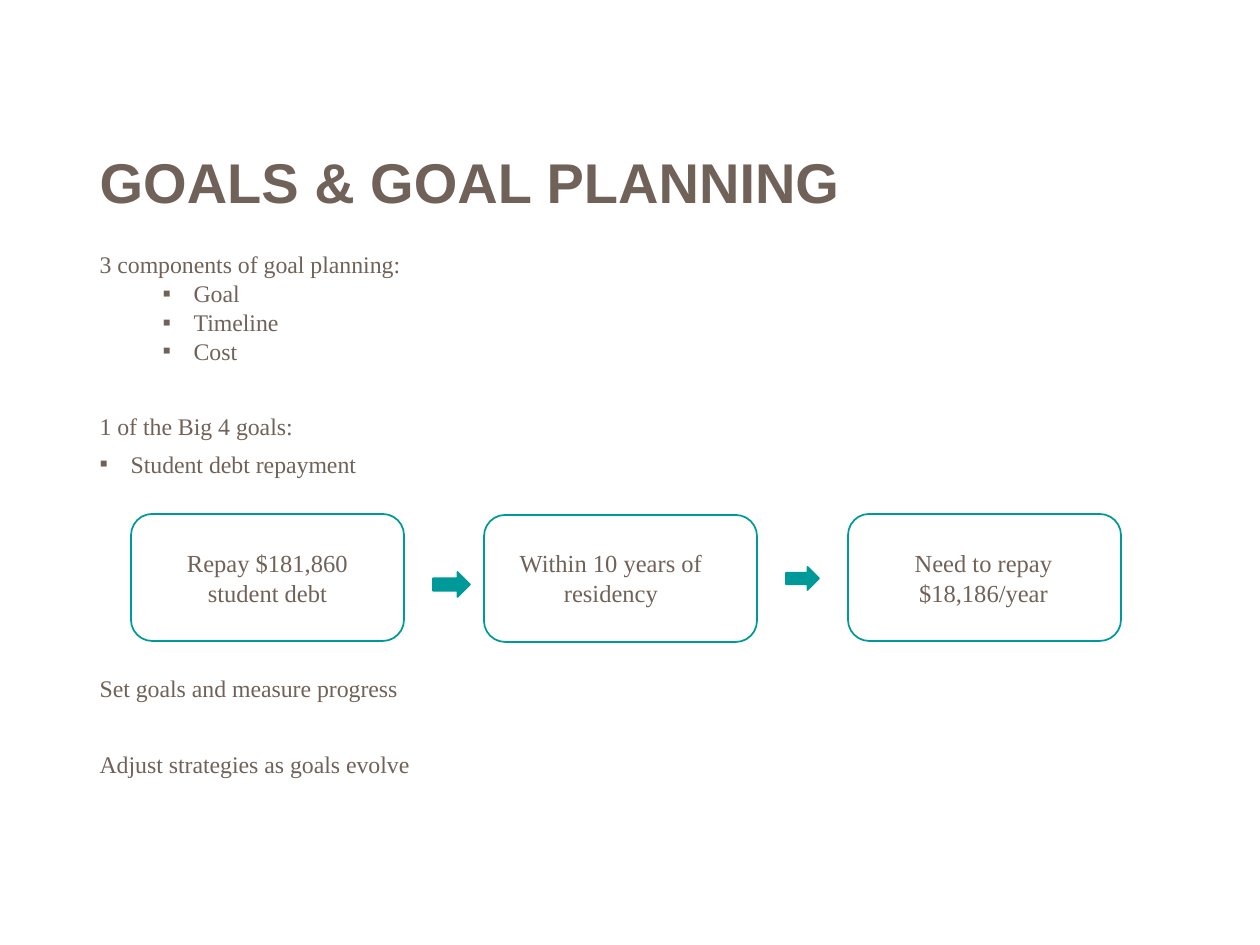
"""Build the slide on goals and goal planning."""
from lxml import etree
from pptx import Presentation
from pptx import util as u
from pptx.dml.color import RGBColor
from pptx.enum import shapes, text
from pptx.oxml import ns

SCALE = 914400 / 126
BROWN = RGBColor(0x70, 0x62, 0x58)
TEAL = RGBColor(0x00, 0x99, 0x99)


def px(*lengths):
    return [u.Emu(round(length * SCALE)) for length in lengths]


def write(para, words, size=14, font="Times New Roman", bold=False,
          align=text.PP_ALIGN.LEFT, bullet=None, margin=0, hang=0,
          before=0, spacing=None):
    props = para._p.get_or_add_pPr()
    margin_emu, hang_emu = px(margin, hang)
    props.set("marL", str(margin_emu))
    props.set("indent", str(-hang_emu))
    if bullet:
        etree.SubElement(props, ns.qn("a:buChar")).set("char", bullet)
    else:
        etree.SubElement(props, ns.qn("a:buNone"))
    para.alignment = align
    para.space_before = u.Pt(before)
    para.line_spacing = spacing
    span = para.add_run()
    span.text = words
    span.font.size = u.Pt(size)
    span.font.name = font
    span.font.bold = bold
    span.font.color.rgb = BROWN


deck = Presentation()
deck.slide_width, deck.slide_height = px(1260, 945)
page = deck.slides.add_slide(deck.slide_layouts[1])

title = page.shapes.title
title.left, title.top, title.width, title.height = px(87, 94, 1061, 183)
title.text_frame.auto_size = text.MSO_AUTO_SIZE.NONE
title.text_frame.vertical_anchor = text.MSO_ANCHOR.MIDDLE
write(title.text_frame.paragraphs[0], "GOALS & GOAL PLANNING",
      size=32, font="Arial", bold=True, spacing=0.9)

body = page.placeholders[1]
body.left, body.top, body.width, body.height = px(87, 252, 1061, 546)
frame = body.text_frame
frame.auto_size = text.MSO_AUTO_SIZE.NONE
frame.vertical_anchor = text.MSO_ANCHOR.TOP
component = dict(bullet="▪", margin=94, hang=31, before=5)
lines = [
    ("3 components of goal planning:", {}),
    ("Goal", component),
    ("Timeline", component),
    ("Cost", component),
    ("1 of the Big 4 goals:", dict(before=31.4)),
    ("Student debt repayment", dict(bullet="▪", margin=31, hang=31, before=10)),
    ("Set goals and measure progress", dict(before=117)),
    ("Adjust strategies as goals evolve", dict(before=31.4)),
]
for number, (words, style) in enumerate(lines):
    para = frame.add_paragraph() if number else frame.paragraphs[0]
    para.level = 1 if style is component else 0
    write(para, words, size=13.6, spacing=u.Pt(11.5), **style)

steps = [
    (131, 514, 141, 253, "Repay $181,860 student debt"),
    (484, 515, 490, 242, "Within 10 years of residency"),
    (848, 514, 867, 233, "Need to repay $18,186/year"),
]
for left, top, label_left, label_width, words in steps:
    box = page.shapes.add_shape(
        shapes.MSO_SHAPE.FLOWCHART_ALTERNATE_PROCESS, *px(left, top, 273, 127))
    box.shadow.inherit = False
    box.fill.background()
    box.line.color.rgb = TEAL
    box.line.width = u.Pt(1)
    label = page.shapes.add_textbox(*px(label_left, 542, label_width, 72))
    label.text_frame.word_wrap = True
    write(label.text_frame.paragraphs[0], words, align=text.PP_ALIGN.CENTER)

for left, top, width, height in [(433, 572, 37, 25), (786, 567, 33, 23)]:
    arrow = page.shapes.add_shape(
        shapes.MSO_SHAPE.RIGHT_ARROW, *px(left, top, width, height))
    arrow.shadow.inherit = False
    arrow.fill.solid()
    arrow.fill.fore_color.rgb = TEAL
    arrow.line.color.rgb = TEAL
    arrow.line.width = u.Pt(1)

deck.save("out.pptx")
